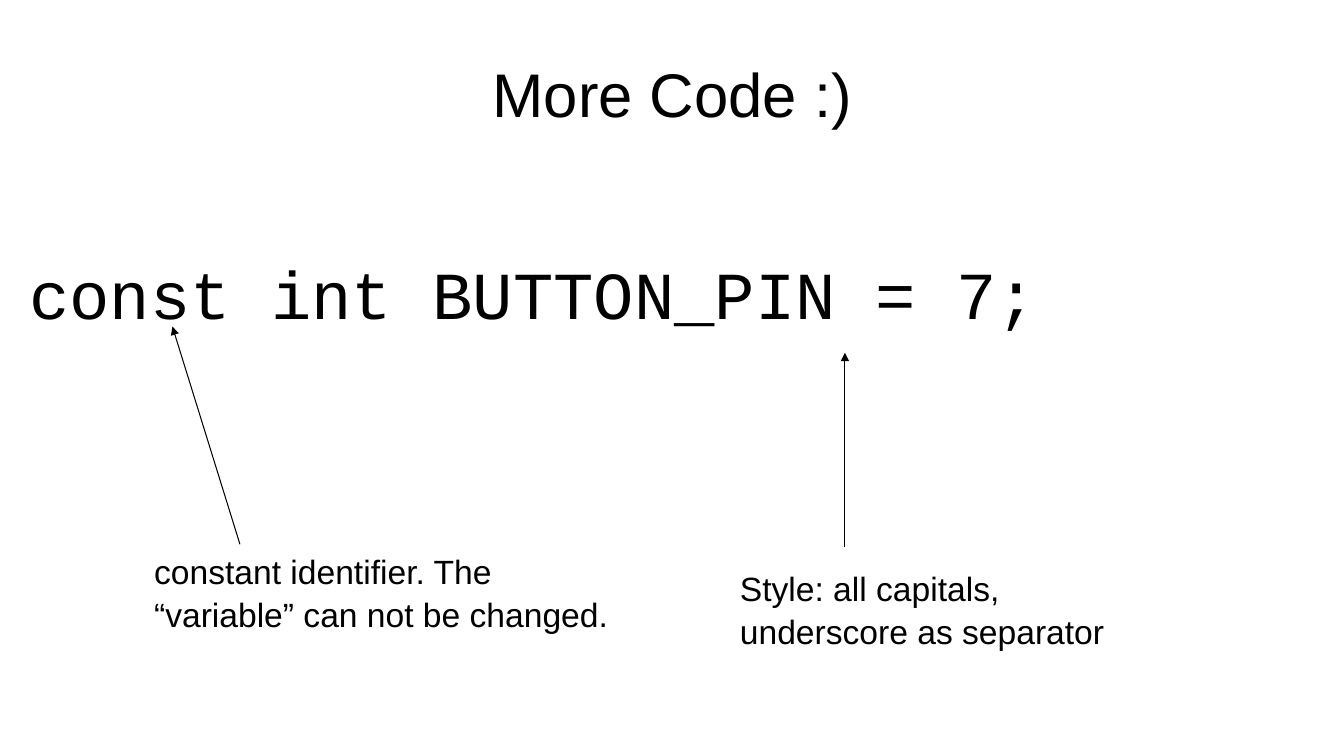
"""Build a slide that explains a constant declaration in code."""
from lxml.etree import SubElement
from pptx import Presentation
from pptx.dml.color import RGBColor
from pptx.enum.shapes import MSO_CONNECTOR
from pptx.enum.text import MSO_ANCHOR, PP_ALIGN
from pptx.oxml.ns import qn
from pptx.util import Pt

PX = 9144
COLORS = {"ink": "000000", "paper": "FFFFFF"}


def px(*lengths):
    return [length * PX for length in lengths]


def write(holder, text, size, font="Arial", align=PP_ALIGN.LEFT,
          anchor=MSO_ANCHOR.TOP, inset=(0, 0), spacing=1.0):
    frame = holder.text_frame
    frame.word_wrap = True
    frame.vertical_anchor = anchor
    frame.margin_left = frame.margin_right = inset[0] * PX
    frame.margin_top = frame.margin_bottom = inset[1] * PX
    paragraph = frame.paragraphs[0]
    paragraph.alignment = align
    paragraph.line_spacing = spacing
    run = paragraph.add_run()
    run.text = text
    run.font.name = font
    run.font.size = Pt(size)
    run.font.color.rgb = RGBColor.from_string(COLORS["ink"])


def add_title(slide, text, box):
    title = slide.shapes.title
    title.left, title.top, title.width, title.height = px(*box)
    write(title, text, 44, align=PP_ALIGN.CENTER, anchor=MSO_ANCHOR.MIDDLE)


def add_text(slide, text, box, size, **style):
    write(slide.shapes.add_textbox(*px(*box)), text, size, **style)


def add_arrow(slide, start, tip):
    arrow = slide.shapes.add_connector(MSO_CONNECTOR.STRAIGHT, *px(*start, *tip))
    arrow.line.color.rgb = RGBColor.from_string(COLORS["ink"])
    arrow.line.width = Pt(0.75)
    SubElement(arrow.line._get_or_add_ln(), qn("a:tailEnd"), type="triangle")
    SubElement(arrow._element.spPr, qn("a:effectLst"))


def add_note(slide, text, box, start, tip):
    add_text(slide, text, box, 24, inset=(10, 5), spacing=1.05)
    add_arrow(slide, start, tip)


def main():
    deck = Presentation()
    deck.slide_width, deck.slide_height = px(1333, 750)
    slide = deck.slides.add_slide(deck.slide_layouts[5])
    slide.background.fill.solid()
    slide.background.fill.fore_color.rgb = RGBColor.from_string(COLORS["paper"])

    add_title(slide, "More Code :)", (67, 30, 1200, 125))
    add_text(slide, "const int BUTTON_PIN = 7;", (29, 250, 1276, 74), 48,
             font="Courier New")
    add_note(slide, "constant identifier. The “variable” can not be changed.",
             (143, 540, 495, 110), start=(238, 540), tip=(171, 324))
    add_note(slide, "Style: all capitals, underscore as separator",
             (724, 557, 429, 110), start=(838, 543), tip=(838, 350))

    deck.save("out.pptx")


if __name__ == "__main__":
    main()
